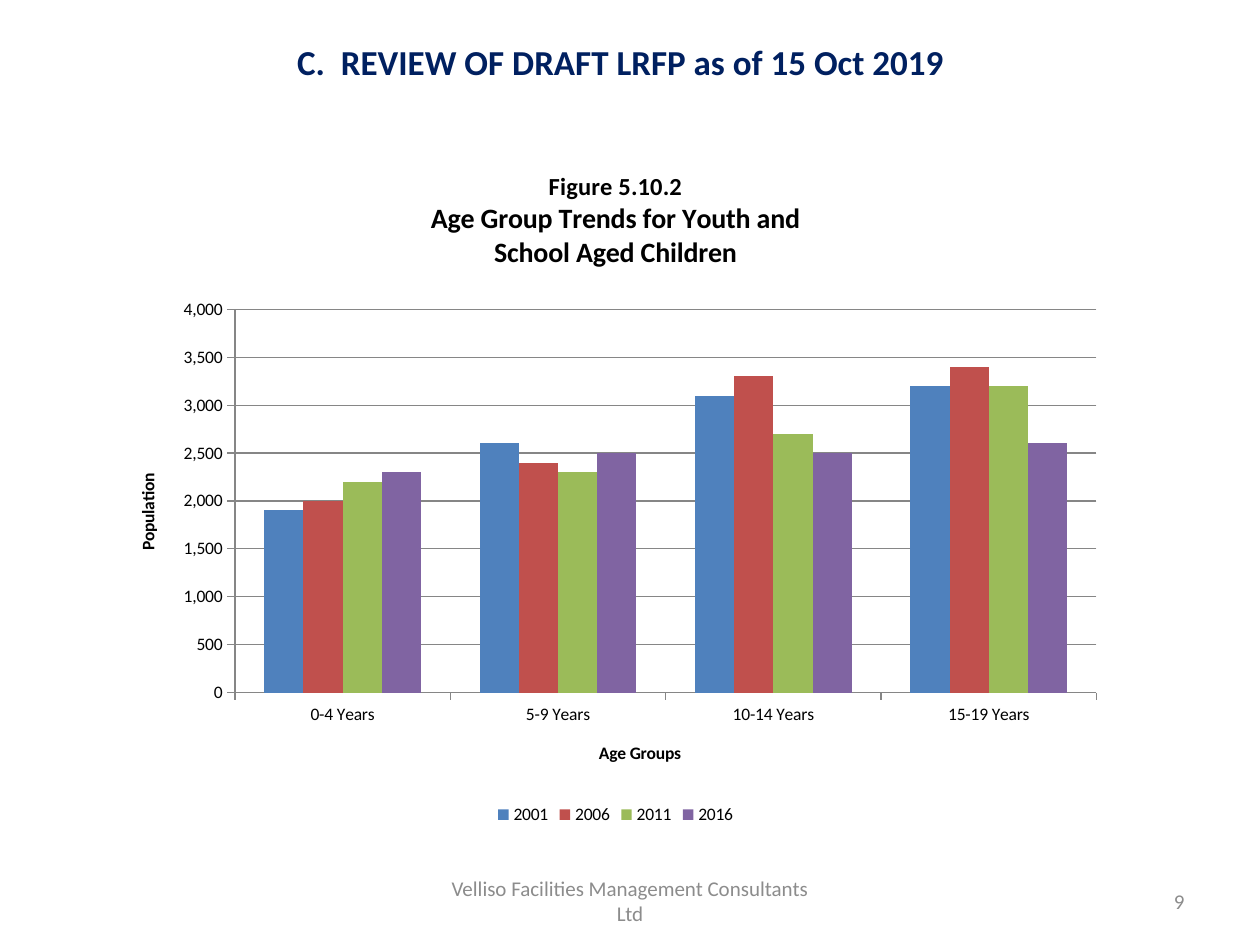
from lxml import etree
from pptx import Presentation
from pptx.chart.data import CategoryChartData
from pptx.dml.color import RGBColor
from pptx.enum.chart import XL_CHART_TYPE, XL_LEGEND_POSITION, XL_TICK_MARK
from pptx.enum.text import MSO_ANCHOR, PP_ALIGN
from pptx.util import Pt

COLUMNS = XL_CHART_TYPE.COLUMN_CLUSTERED
BOTTOM = XL_LEGEND_POSITION.BOTTOM
TICK_OUT = XL_TICK_MARK.OUTSIDE
MIDDLE = MSO_ANCHOR.MIDDLE
CENTER, RIGHT = PP_ALIGN.CENTER, PP_ALIGN.RIGHT
CHART_NS = "http://schemas.openxmlformats.org/drawingml/2006/chart"


def rgb(hex_color):
    return RGBColor.from_string(hex_color)


def set_font(font, size, color, bold=False):
    for name, value in {"name": "Calibri", "size": Pt(size), "bold": bold}.items():
        setattr(font, name, value)
    font.color.rgb = rgb(color)


presentation = Presentation()
presentation.slide_width, presentation.slide_height = Pt(720), Pt(540)
slide = presentation.slides.add_slide(presentation.slide_layouts[5])

# Heading
heading = slide.shapes.title
heading.left, heading.top, heading.width, heading.height = Pt(60), Pt(16.5), Pt(589.5), Pt(37.5)
heading.text_frame.text = "C.  REVIEW OF DRAFT LRFP as of 15 Oct 2019"
heading.text_frame.vertical_anchor = MIDDLE
heading_line = heading.text_frame.paragraphs[0]
heading_line.alignment = CENTER
set_font(heading_line.runs[0].font, 20, "002060", True)

# Population by age group and census year
populations = {
    "2001": ("4F81BD", [1900, 2600, 3100, 3200]),
    "2006": ("C0504D", [2000, 2400, 3300, 3400]),
    "2011": ("9BBB59", [2200, 2300, 2700, 3200]),
    "2016": ("8064A2", [2300, 2500, 2500, 2600]),
}
census = CategoryChartData(number_format="#,##0")
census.categories = ["0-4 Years", "5-9 Years", "10-14 Years", "15-19 Years"]
for year, (color, counts) in populations.items():
    census.add_series(year, counts)
chart = slide.shapes.add_chart(COLUMNS, Pt(65.5), Pt(83), Pt(572.5), Pt(391), census).chart
set_font(chart.font, 10, "000000")

# Columns
columns = chart.plots[0]
columns.gap_width, columns.overlap, columns.vary_by_categories = 150, 0, False
for series, (color, counts) in zip(columns.series, populations.values()):
    series.format.fill.solid()
    series.format.fill.fore_color.rgb = rgb(color)

# Chart title
chart.has_title = True
caption = chart.chart_title.text_frame
caption.text = "Figure 5.10.2\nAge Group Trends for Youth and\nSchool Aged Children"
for line, size in zip(caption.paragraphs, (14, 16, 16)):
    line.alignment = CENTER
    set_font(line.runs[0].font, size, "000000", True)

# Axes, gridlines and legend
age_axis, population_axis = chart.category_axis, chart.value_axis
for axis, label in ((age_axis, "Age Groups"), (population_axis, "Population")):
    axis.has_title = True
    axis.axis_title.text_frame.text = label
    set_font(axis.axis_title.text_frame.paragraphs[0].runs[0].font, 10, "000000", True)
    set_font(axis.tick_labels.font, 10, "000000")
    axis.major_tick_mark = TICK_OUT
    axis.format.line.color.rgb = rgb("868686")
    axis.format.line.width = Pt(0.75)
population_axis.minimum_scale, population_axis.maximum_scale = 0, 4000
population_axis.major_unit = 500
population_axis.tick_labels.number_format = "#,##0"
population_axis.tick_labels.number_format_is_linked = False
population_axis.major_gridlines.format.line.color.rgb = rgb("868686")
population_axis.major_gridlines.format.line.width = Pt(0.75)
chart.has_legend = True
chart.legend.position = BOTTOM
chart.legend.include_in_layout = False
set_font(chart.legend.font, 10, "000000")

# Fixed plot area, as fractions of the chart
plot_area = chart.element.find(f".//{{{CHART_NS}}}plotArea")
for automatic in plot_area.findall(f"{{{CHART_NS}}}layout"):
    plot_area.remove(automatic)
layout = etree.Element(f"{{{CHART_NS}}}layout")
manual = etree.SubElement(layout, f"{{{CHART_NS}}}manualLayout")
for tag, value in {"layoutTarget": "inner", "xMode": "edge", "yMode": "edge",
                   "x": "0.12", "y": "0.24", "w": "0.86", "h": "0.56"}.items():
    etree.SubElement(manual, f"{{{CHART_NS}}}{tag}").set("val", value)
plot_area.insert(0, layout)

# Footer and page number
for text, left, width, alignment in (
    ("Velliso Facilities Management Consultants Ltd", 246, 228, CENTER),
    ("9", 516, 168, RIGHT),
):
    footer = slide.shapes.add_textbox(Pt(left), Pt(500.5), Pt(width), Pt(28.75)).text_frame
    footer.word_wrap = True
    footer.vertical_anchor = MIDDLE
    footer.text = text
    footer.paragraphs[0].alignment = alignment
    set_font(footer.paragraphs[0].runs[0].font, 12, "8C8C8C")

presentation.save("out.pptx")
